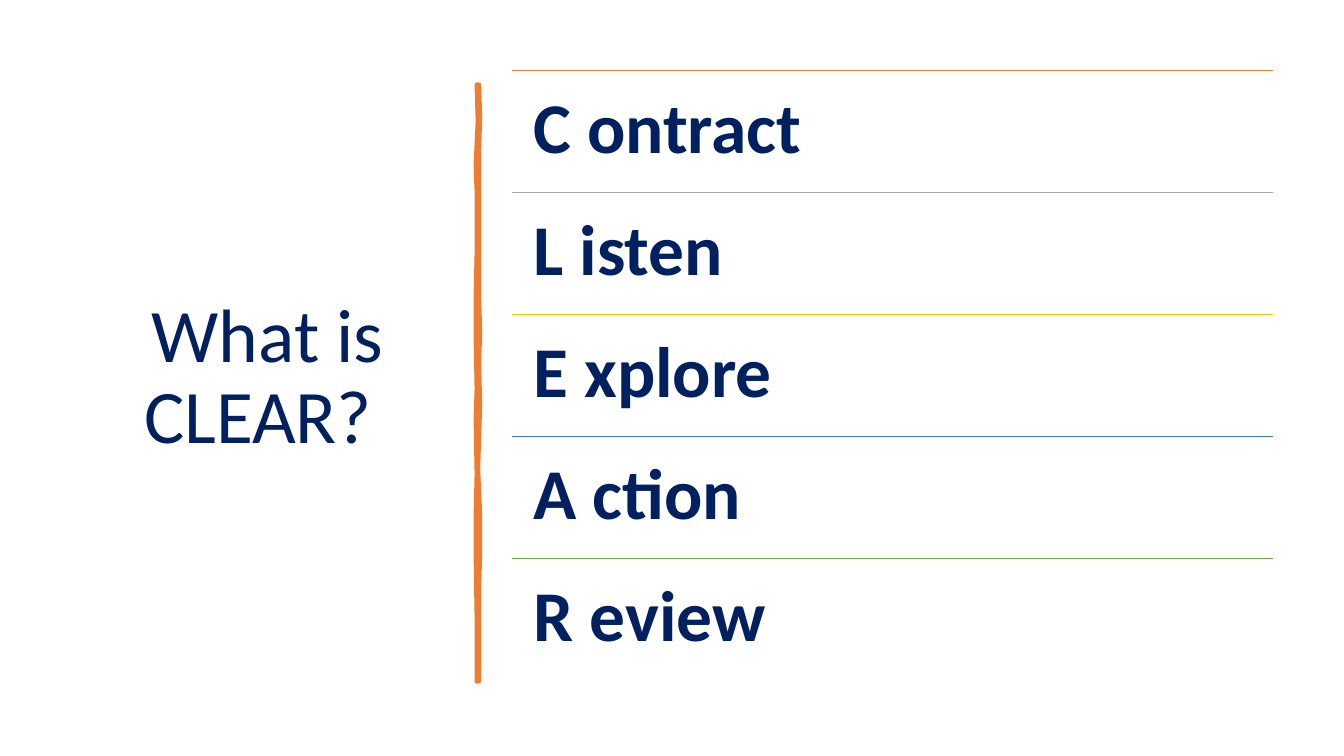
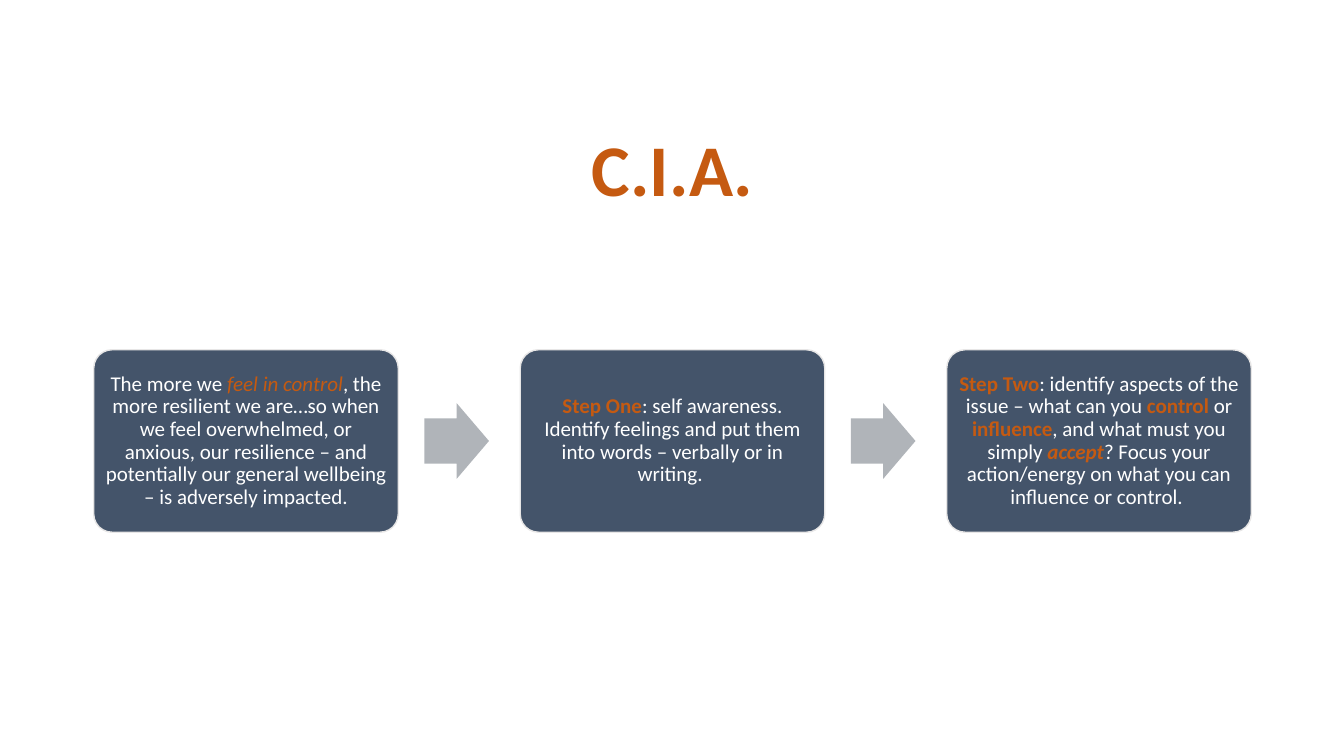
from lxml.etree import SubElement
from pptx import Presentation
from pptx.dml.color import RGBColor
from pptx.enum.shapes import MSO_CONNECTOR as CONNECTOR, MSO_SHAPE as SHAPE
from pptx.enum.text import MSO_ANCHOR as ANCHOR, PP_ALIGN as ALIGN
from pptx.oxml.ns import qn
from pptx.util import Inches, Pt

FONT = "Calibri"
NAVY, RUST, ORANGE = "002060", "C55A11", "ED7D31"
SLATE, PALE, GREY, WHITE = "44546A", "E7E6E6", "B0B4B9", "FFFFFF"

ROWS = [
    ("C ontract", ORANGE),
    ("L isten", "A5A5A5"),
    ("E xplore", "FFC000"),
    ("A ction", "4472C4"),
    ("R eview", "70AD47"),
]
ROWS_LEFT, ROWS_TOP, ROW_W, ROW_H = 5.08, 0.7, 7.55, 1.21

# Edges of the hand-drawn divider, each from top to bottom
RIGHT_EDGE = [(4.75, 0.84), (4.76, 1.15), (4.75, 1.5), (4.75, 2.26), (4.75, 2.94),
              (4.76, 3.3), (4.75, 3.6), (4.76, 4.0), (4.75, 4.36), (4.74, 4.65),
              (4.76, 5.1), (4.76, 5.5), (4.75, 5.84), (4.75, 6.76)]
LEFT_EDGE = [(4.73, 0.84), (4.74, 1.2), (4.72, 1.64), (4.73, 1.9), (4.73, 2.5),
             (4.72, 2.94), (4.72, 3.35), (4.73, 3.86), (4.72, 4.15), (4.73, 4.71),
             (4.72, 5.1), (4.72, 5.5), (4.73, 6.13), (4.73, 6.76)]

ACCENT, BOLD = {"color": RUST}, {"color": RUST, "bold": True}
STEPS = [
    [("The more we ", {}), ("feel in control", {**ACCENT, "italic": True}),
     (", the more resilient we are…so when we feel overwhelmed, or anxious, "
      "our resilience – and potentially our general wellbeing – is adversely "
      "impacted.", {})],
    [("Step One", BOLD),
     (": self awareness. Identify feelings and put them into words – verbally "
      "or in writing. ", {})],
    [("Step Two", BOLD), (": identify aspects of the issue – what can you ", {}),
     ("control ", BOLD), ("or ", {}), ("influence", BOLD),
     (", and what must you simply ", {}), ("accept", {**BOLD, "italic": True}),
     ("? Focus your action/energy on what you can influence or control. ", {})],
]
STEP_LEFT, STEP_TOP, STEP_W, STEP_H, STEP_PITCH = 0.93, 3.47, 3.02, 1.81, 4.23
ARROW_W, ARROW_H, ARROW_OFFSET = 0.64, 0.75, 3.28


def rgb(value):
    return RGBColor.from_string(value)


def box(x, y, w, h):
    return [Inches(v) for v in (x, y, w, h)]


def write(sp, runs, inset=None, anchor=ANCHOR.TOP, align=ALIGN.LEFT, **base):
    """Fill one paragraph with (text, format) runs laid over the base format."""
    tf = sp.text_frame
    tf.word_wrap = True
    tf.vertical_anchor = anchor
    if inset is not None:
        for side in ("left", "top", "right", "bottom"):
            setattr(tf, f"margin_{side}", Inches(inset))
    p = tf.paragraphs[0]
    p.alignment = align
    p.line_spacing = 0.9
    for text, extra in runs:
        r = p.add_run()
        r.text = text
        fmt = {"name": FONT, **base, **extra}
        r.font.color.rgb = rgb(fmt.pop("color"))
        for key, value in fmt.items():
            setattr(r.font, key, value)


def add_title(s, place, runs, **base):
    sp = s.shapes.add_textbox(*box(*place))
    write(sp, runs, anchor=ANCHOR.MIDDLE, align=ALIGN.CENTER, **base)


def paint(sp, fill, line=None, width=1):
    sp.shadow.inherit = False
    sp.fill.solid()
    sp.fill.fore_color.rgb = rgb(fill)
    if line:
        sp.line.color.rgb = rgb(line)
        sp.line.width = Pt(width)
    else:
        sp.line.fill.background()


def add_shape(s, kind, place, adjustments, fill, line=None):
    sp = s.shapes.add_shape(kind, *box(*place))
    for i, value in enumerate(adjustments):
        sp.adjustments[i] = value
    paint(sp, fill, line)
    return sp


def add_rule(s, x, y, w, color):
    ln = s.shapes.add_connector(CONNECTOR.STRAIGHT, *box(x, y, x + w, y))
    ln.line.color.rgb = rgb(color)
    ln.line.width = Pt(1)
    SubElement(ln._element.spPr, qn("a:effectLst"))


def add_brush_divider(s):
    points = [(Inches(x), Inches(y)) for x, y in RIGHT_EDGE + LEFT_EDGE[::-1]]
    builder = s.shapes.build_freeform(*points[0])
    builder.add_line_segments(points[1:], close=True)
    sp = builder.convert_to_shape()
    paint(sp, ORANGE, ORANGE, 3.25)
    SubElement(sp._element.spPr.find(qn("a:ln")), qn("a:round"))


def add_row(s, y, text, color):
    add_rule(s, ROWS_LEFT, y, ROW_W, color)
    sp = s.shapes.add_textbox(*box(ROWS_LEFT, y, ROW_W, ROW_H))
    write(sp, [(text, {})], inset=0.21, size=Pt(51), bold=True, color=NAVY)


def add_step(s, x, runs):
    sp = add_shape(s, SHAPE.ROUNDED_RECTANGLE, (x, STEP_TOP, STEP_W, STEP_H),
                   [0.1], SLATE, PALE)
    write(sp, runs, inset=0.06, anchor=ANCHOR.MIDDLE, align=ALIGN.CENTER,
          size=Pt(15), color=WHITE)


def build_clear(s):
    add_title(s, (0.69, 0.7, 3.74, 6.11),
              [(" ", {"name": "Times New Roman"}), ("What is CLEAR?", {})],
              size=Pt(54), color=NAVY)
    add_brush_divider(s)
    for i, (text, color) in enumerate(ROWS):
        add_row(s, ROWS_TOP + i * ROW_H, text, color)


def build_cia(s):
    add_title(s, (0.92, 0.61, 11.5, 2.22), [("C.I.A.", {})],
              size=Pt(52), bold=True, color=RUST)
    arrow_top = STEP_TOP + (STEP_H - ARROW_H) / 2
    for i, runs in enumerate(STEPS):
        x = STEP_LEFT + i * STEP_PITCH
        add_step(s, x, runs)
        if i < len(STEPS) - 1:
            add_shape(s, SHAPE.RIGHT_ARROW,
                      (x + ARROW_OFFSET, arrow_top, ARROW_W, ARROW_H),
                      [0.6, 0.5], GREY)


def main():
    prs = Presentation()
    prs.slide_width, prs.slide_height = Inches(13.33), Inches(7.5)
    for build in (build_clear, build_cia):
        build(prs.slides.add_slide(prs.slide_layouts[6]))
    prs.save("out.pptx")


if __name__ == "__main__":
    main()
